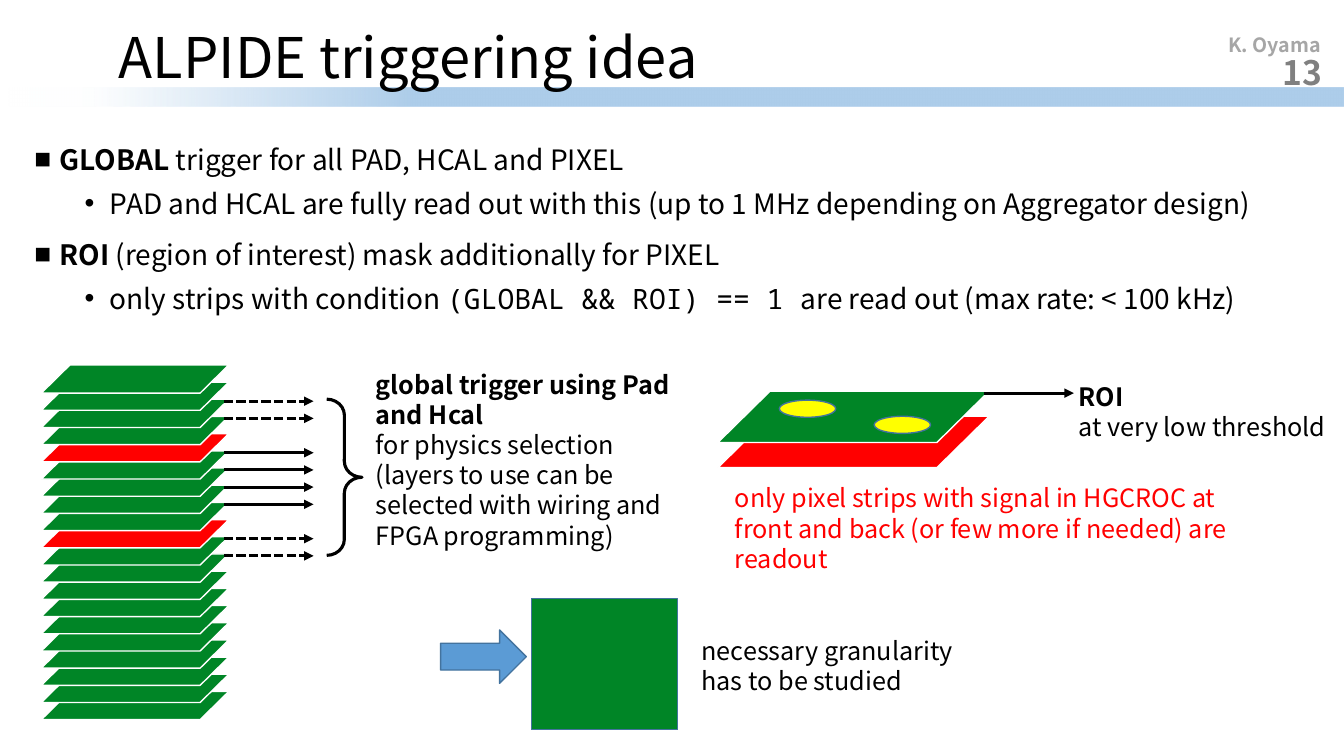
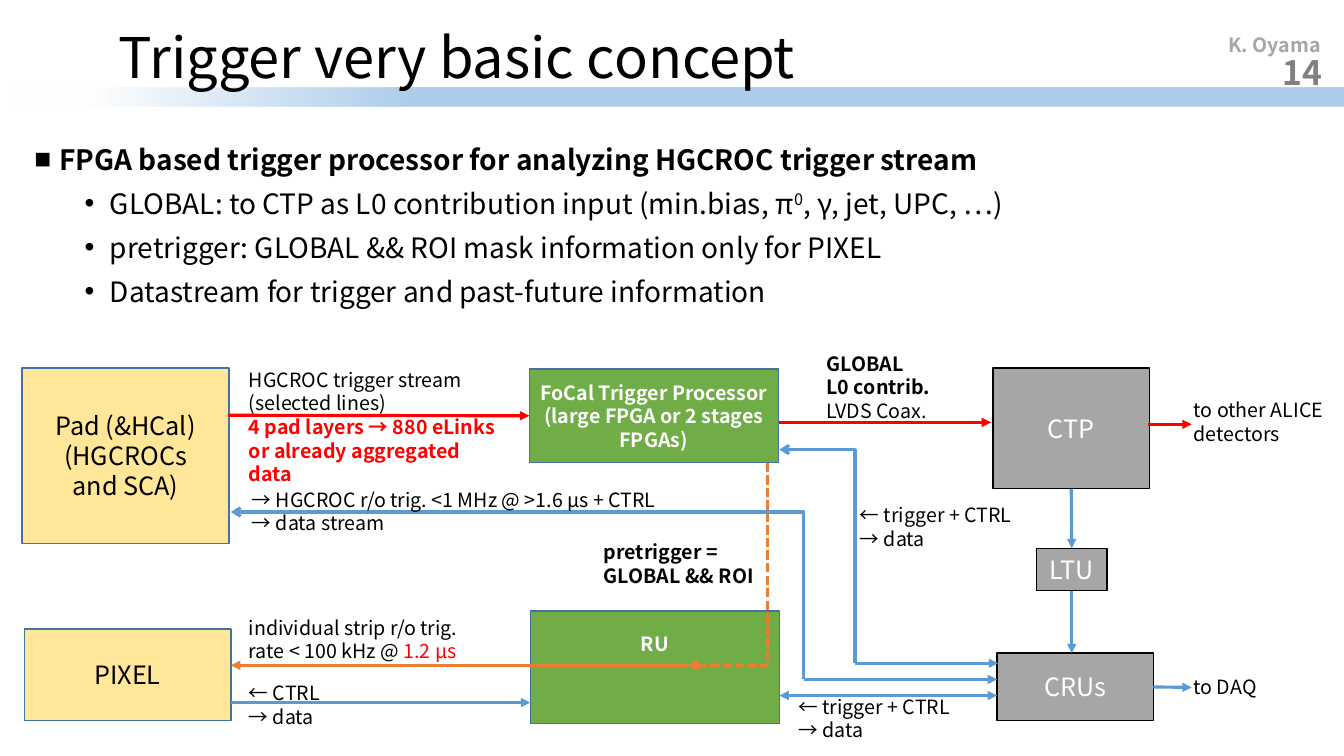
from dataclasses import dataclass

from lxml import etree
from pptx import Presentation
from pptx.dml.color import RGBColor
from pptx.enum.dml import MSO_LINE
from pptx.enum.shapes import MSO_CONNECTOR, MSO_SHAPE
from pptx.enum.text import MSO_ANCHOR, MSO_AUTO_SIZE, PP_ALIGN
from pptx.oxml.ns import qn
from pptx.util import Inches, Pt

RECT, OVAL = MSO_SHAPE.RECTANGLE, MSO_SHAPE.OVAL
SLANT, BRACE = MSO_SHAPE.PARALLELOGRAM, MSO_SHAPE.RIGHT_BRACE
BLOCK = MSO_SHAPE.RIGHT_ARROW
STRAIGHT = MSO_CONNECTOR.STRAIGHT
DASH = MSO_LINE.SQUARE_DOT
LEFT, CENTER, RIGHT = PP_ALIGN.LEFT, PP_ALIGN.CENTER, PP_ALIGN.RIGHT
TOP, MIDDLE = MSO_ANCHOR.TOP, MSO_ANCHOR.MIDDLE
NO_FIT = MSO_AUTO_SIZE.NONE


@dataclass(frozen=True)
class Theme:
    face: str = "Noto Sans CJK JP"
    mono: str = "Noto Sans Mono"
    black: str = "000000"
    white: str = "FFFFFF"
    red: str = "FF0000"
    green: str = "008526"
    leaf: str = "70AD47"
    cream: str = "FFE699"
    gray: str = "A6A6A6"
    dark: str = "808080"
    blue: str = "5B9BD5"
    edge: str = "43739E"
    orange: str = "ED7D31"
    yellow: str = "FFFF00"
    title: int = 40
    page: int = 24
    body: int = 20
    text: int = 18
    small: int = 14
    thin: float = 1
    thick: float = 2.25
    # position, colour and opacity in thousandths of a percent
    band: tuple = ((0, "F7FAFD", 0), (7000, "ADCDEA", 2000),
                   (31000, "ADCDEA", 100000), (100000, "ADCDEA", 100000))


T = Theme()
BOLD = {"bold": True}
PLAIN = {"bold": False}


def add_tag(parent, tag, **attrs):
    return etree.SubElement(parent, qn(tag), attrs)


def rgb(color):
    return RGBColor.from_string(color)


def place(shape, box):
    shape.left, shape.top, shape.width, shape.height = map(Inches, box)


def set_font(font, size=None, color=None, bold=None, face=None, base=None):
    if size:
        font.size = Pt(size)
    if color:
        font.color.rgb = rgb(color)
    if bold is not None:
        font.bold = bold
    if face:
        font.name = face
    if base:
        font._element.set("baseline", str(base * 1000))


def put(para, line, look):
    """Fill a paragraph from a string, a (text, style) pair or a list of runs."""
    if isinstance(line, tuple):
        line, extra = line
        look = look | extra
    set_font(para.font, **({"face": T.face, "color": T.black} | look))
    for part in [line] if isinstance(line, str) else line:
        text, style = (part, {}) if isinstance(part, str) else part
        run = para.add_run()
        run.text = text
        if style:
            set_font(run.font, **style)


def each_para(frame, lines):
    for i, line in enumerate(lines):
        yield (frame.add_paragraph() if i else frame.paragraphs[0]), line


def write(frame, lines, align=LEFT, anchor=TOP, **look):
    frame.word_wrap = True
    frame.vertical_anchor = anchor
    for para, line in each_para(frame, lines):
        para.alignment = align
        put(para, line, look)


def label(slide, box, *lines, size=T.small, **look):
    shape = slide.shapes.add_textbox(*map(Inches, box))
    write(shape.text_frame, lines, size=size, **look)
    return shape


def draw(shapes, kind, box, fill=None, line=T.edge, width=T.thin, adj=()):
    shape = shapes.add_shape(kind, *map(Inches, box))
    shape.shadow.inherit = False
    if fill:
        shape.fill.solid()
        shape.fill.fore_color.rgb = rgb(fill)
    else:
        shape.fill.background()
    shape.line.color.rgb = rgb(line)
    shape.line.width = Pt(width)
    for i, value in enumerate(adj):
        shape.adjustments[i] = value
    return shape


def node(slide, box, fill, *lines, line=T.edge, size=T.text, color=T.black,
         anchor=MIDDLE, **look):
    shape = draw(slide.shapes, RECT, box, fill, line)
    write(shape.text_frame, lines, CENTER, anchor, size=size, color=color, **look)
    return shape


def stroke(shape, color, dash, head, tail):
    shape.line.color.rgb = rgb(color)
    shape.line.width = Pt(T.thick)
    if dash:
        shape.line.dash_style = DASH
    ln = shape._element.spPr.find(qn("a:ln"))
    for tag, kind in (("a:headEnd", head), ("a:tailEnd", tail)):
        if kind:
            add_tag(ln, tag, type=kind)


def arrow(slide, start, end, color=T.black, dash=False, head=None,
          tail="triangle", source=None, target=None):
    """Draw a straight arrow; source and target are (shape, side) joints."""
    link = slide.shapes.add_connector(STRAIGHT, *map(Inches, start + end))
    if source:
        link.begin_connect(*source)
    if target:
        link.end_connect(*target)
    stroke(link, color, dash, head, tail)
    add_tag(link._element.spPr, "a:effectLst")


def elbow(slide, points, color, dash=False):
    (x, y), *rest = [tuple(map(Inches, point)) for point in points]
    pen = slide.shapes.build_freeform(x, y)
    pen.add_line_segments(rest, close=False)
    shape = pen.convert_to_shape()
    shape.shadow.inherit = False
    shape.fill.background()
    stroke(shape, color, dash, None, "arrow")


def brand(layout, slide):
    """Set up the layout; its band and author are drawn on slide, then moved."""
    place(layout.placeholders[0], (1.08, 0.15, 11.93, 0.9))
    place(layout.placeholders[1], (0.24, 1.33, 13.04, 2.14))
    band = draw(slide.shapes, RECT, (0, 0.87, 13.33, 0.19))
    band.line.fill.background()
    props = band._element.spPr
    grad = etree.Element(qn("a:gradFill"), rotWithShape="1")
    stops = add_tag(grad, "a:gsLst")
    for pos, color, alpha in T.band:
        stop = add_tag(stops, "a:gs", pos=str(pos))
        tint = add_tag(stop, "a:srgbClr", val=color)
        add_tag(tint, "a:alpha", val=str(alpha))
    add_tag(grad, "a:lin", ang="0", scaled="0")
    props.replace(props.find(qn("a:noFill")), grad)
    name = label(slide, (11.39, 0.29, 1.81, 0.31), "K. Oyama", color=T.gray,
                 align=RIGHT, anchor=MIDDLE, **BOLD)
    tree = layout.shapes._spTree
    tree.insert(2, band._element)
    tree.append(name._element)


def bullet(para, level, first):
    para.level = level
    props = para._p.get_or_add_pPr()
    props.set("marL", str(Inches(0.75 if level else 0.25)))
    props.set("indent", str(Inches(-0.25)))
    add_tag(props, "a:buFont", typeface="Arial")
    add_tag(props, "a:buChar", char="•" if level else "■")
    para.line_spacing = 1.1
    para.space_before = Pt(0 if first else 5 if level else 10)


def fill_page(slide, number, title, points):
    head, body = slide.placeholders
    head.text_frame.auto_size = body.text_frame.auto_size = NO_FIT
    write(head.text_frame, [title], anchor=MIDDLE, size=T.title)
    head.text_frame.paragraphs[0].line_spacing = 0.9
    for para, (level, line) in each_para(body.text_frame, points):
        bullet(para, level, line is points[0][1])
        put(para, line, {"size": T.body})
    label(slide, (10.21, 0.52, 3, 0.4), str(number), size=T.page,
          color=T.dark, align=RIGHT, anchor=MIDDLE, **BOLD)


def plate(shapes, box, color):
    draw(shapes, SLANT, box, color, T.white, adj=[1.016])


def draw_idea(slide):
    fill_page(slide, 13, "ALPIDE triggering idea", [
        (0, [("GLOBAL", BOLD), " trigger for all PAD, HCAL and PIXEL"]),
        (1, "PAD and HCAL are fully read out with this "
            "(up to 1 MHz depending on Aggregator design)"),
        (0, [("ROI", BOLD), " (region of interest) mask additionally for PIXEL"]),
        (1, ["only strips with condition ",
             ("(GLOBAL && ROI) == 1 ", {"face": T.mono}),
             "are read out (max rate: < 100 kHz)"])])
    count, top, low = 20, 3.62, 6.86
    pitch = (low - top) / (count - 1)
    stack = slide.shapes.add_group_shape().shapes
    for i in range(count):
        plate(stack, (0.41, low - i * pitch, 1.86, 0.28),
              T.red if i in (10, 15) else T.green)
    pair = slide.shapes.add_group_shape().shapes
    for y, color in ((4.13, T.red), (3.88, T.green)):
        plate(pair, (7.12, y, 2.69, 0.51), color)
    for i in (0, 1, 3, 4, 5, 6, 8, 9):
        y = 3.98 + i * pitch
        arrow(slide, (2.22, y), (3.11, y), dash=not 3 <= i <= 6)
    draw(slide.shapes, BRACE, (3.24, 3.96, 0.35, 1.55), line=T.black,
         width=T.thick, adj=[0.45, 0.5])
    label(slide, (3.63, 3.61, 3.21, 1.92),
          ("global trigger using Pad and Hcal", BOLD), "for physics selection",
          "(layers to use can be selected with wiring and FPGA programming)",
          size=T.text)
    arrow(slide, (9.76, 3.9), (10.65, 3.9))
    label(slide, (10.6, 3.73, 2.69, 0.71), ("ROI", BOLD),
          "at very low threshold", size=T.text)
    for x, y in ((7.73, 3.97), (8.67, 4.13)):
        draw(slide.shapes, OVAL, (x, y, 0.56, 0.17), T.yellow)
    label(slide, (7.19, 4.74, 5.24, 1.01),
          "only pixel strips with signal in HGCROC at front and back "
          "(or few more if needed) are readout", size=T.text, color=T.red)
    draw(slide.shapes, RECT, (5.27, 5.94, 1.45, 1.3), T.green)
    draw(slide.shapes, BLOCK, (4.37, 6.25, 0.85, 0.53), T.blue)
    label(slide, (6.86, 6.25, 2.87, 0.71),
          "necessary granularity has to be studied", size=T.text)


def draw_concept(slide):
    fill_page(slide, 14, "Trigger very basic concept", [
        (0, ("FPGA based trigger processor for analyzing HGCROC trigger stream",
             BOLD)),
        (1, ["GLOBAL: to CTP as L0 contribution input (min.bias, π",
             ("0", {"base": 30}), ", γ, jet, UPC, …)"]),
        (1, "pretrigger: GLOBAL && ROI mask information only for PIXEL"),
        (1, "Datastream for trigger and past-future information")])
    chip = {"size": T.small, "color": T.white, "bold": True}
    unit = {"line": T.black, "color": T.white}
    node(slide, (0.22, 3.65, 2.05, 1.74), T.cream,
         "Pad (&HCal)", "(HGCROCs", "and SCA)")
    crus = node(slide, (9.89, 6.48, 1.55, 0.67), T.gray, "CRUs", **unit)
    focal = node(slide, (5.25, 3.66, 2.47, 0.93), T.leaf,
                 "FoCal Trigger Processor", "(large FPGA or 2 stages FPGAs)", **chip)
    node(slide, (0.24, 6.24, 2.05, 0.91), T.cream, "PIXEL")
    ctp = node(slide, (9.85, 3.65, 1.55, 1.2), T.gray, "CTP", **unit)
    ltu = node(slide, (10.28, 5.44, 0.7, 0.42), T.gray, "LTU", **unit)
    ru = node(slide, (5.26, 6.06, 2.47, 1.12), T.leaf, "RU", anchor=TOP, **chip)
    ru.text_frame.margin_top = Inches(0.21)

    arrow(slide, (2.26, 4.12), (5.25, 4.12), T.red, target=(focal, 1))
    arrow(slide, (7.73, 4.19), (9.83, 4.19), T.red)
    arrow(slide, (11.39, 4.21), (11.82, 4.21), T.red)
    arrow(slide, (10.63, 4.85), (10.63, 5.44), T.blue,
          source=(ctp, 2), target=(ltu, 0))
    arrow(slide, (10.63, 5.86), (10.63, 6.48), T.blue, source=(ltu, 2))
    arrow(slide, (6.82, 6.6), (2.29, 6.6), T.orange)
    arrow(slide, (9.89, 6.9), (7.73, 6.9), T.blue, head="triangle")
    arrow(slide, (7.97, 6.74), (9.89, 6.74), T.blue)
    arrow(slide, (5.26, 6.97), (2.29, 6.97), T.blue, head="triangle", tail=None)
    arrow(slide, (8.48, 6.58), (9.9, 6.58), T.blue)
    arrow(slide, (11.44, 6.82), (11.82, 6.82), T.blue, source=(crus, 3))
    elbow(slide, [(7.61, 4.59), (7.61, 6.6), (6.82, 6.6)], T.orange, dash=True)
    elbow(slide, [(7.97, 6.74), (7.97, 5.08), (2.29, 5.08)], T.blue)
    elbow(slide, [(8.48, 6.58), (8.48, 4.46), (7.73, 4.46)], T.blue)

    alert = {"color": T.red, "bold": True}
    label(slide, (2.37, 3.6, 2.76, 1.04), "HGCROC trigger stream",
          "(selected lines)", ("4 pad layers → 880 eLinks", alert),
          ("or already aggregated data", alert))
    label(slide, (8.1, 3.44, 1.4, 0.81), "GLOBAL", "L0 contrib.",
          ("LVDS Coax.", PLAIN), **BOLD)
    label(slide, (2.37, 6.06, 2.36, 0.57), "individual strip r/o trig.",
          ["rate < 100 kHz @ ", ("1.2 μs", {"color": T.red})])
    label(slide, (2.4, 4.79, 4.49, 0.57),
          "→ HGCROC r/o trig. <1 MHz @ >1.6 μs + CTRL", "→ data stream")
    label(slide, (11.74, 3.9, 1.58, 0.57), "to other ALICE", "detectors")
    label(slide, (5.89, 5.31, 1.78, 0.57), "pretrigger =", "GLOBAL && ROI", **BOLD)
    label(slide, (2.37, 6.71, 1.1, 0.57), "← CTRL", "→ data")
    for x, y in ((8.43, 4.94), (7.82, 6.84)):
        label(slide, (x, y, 1.8, 0.57), "← trigger + CTRL", "→ data")
    label(slide, (11.74, 6.65, 1, 0.34), "to DAQ")


def main():
    deck = Presentation()
    deck.slide_width, deck.slide_height = Inches(13.33), Inches(7.5)
    layout = deck.slide_layouts[1]
    idea, concept = (deck.slides.add_slide(layout) for _ in range(2))
    brand(layout, idea)
    draw_idea(idea)
    draw_concept(concept)
    deck.save("out.pptx")


if __name__ == "__main__":
    main()
